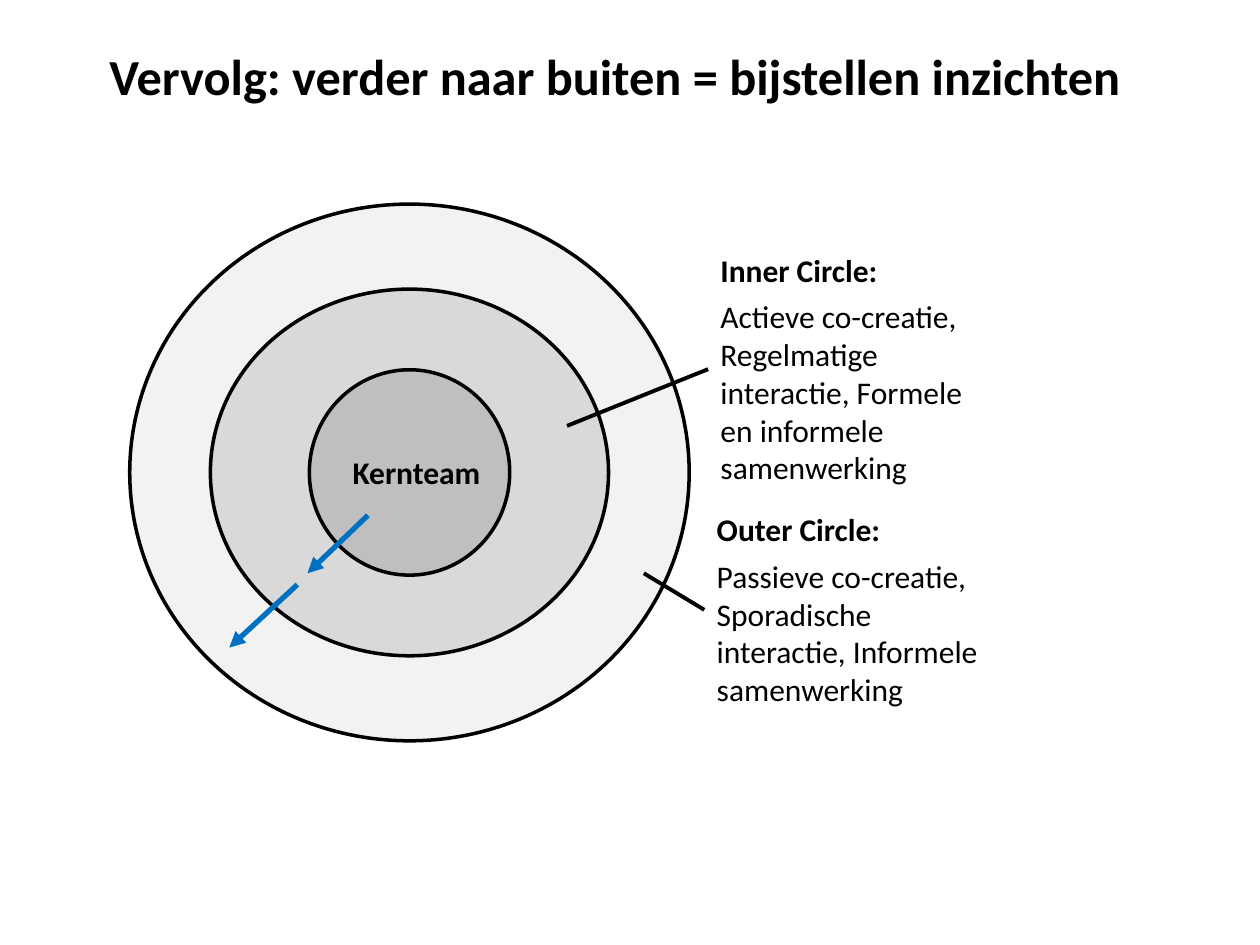
from lxml import etree
from pptx import Presentation
from pptx.dml.color import RGBColor
from pptx.enum.shapes import MSO_CONNECTOR, MSO_SHAPE
from pptx.enum.text import MSO_ANCHOR
from pptx.oxml.ns import qn
from pptx.util import Inches, Pt

OVAL = MSO_SHAPE.OVAL
STRAIGHT = MSO_CONNECTOR.STRAIGHT
MIDDLE = MSO_ANCHOR.MIDDLE

COLORS = {
    "black": "000000",
    "outer": "F2F2F2",
    "inner": "D9D9D9",
    "core": "BFBFBF",
    "arrow": "0070C0",
}


def add_text(slide, box, lines, size=18):
    """Add a text box from (text, bold) lines, one paragraph each."""
    shape = slide.shapes.add_textbox(*map(Inches, box))
    frame = shape.text_frame
    frame.word_wrap = True
    for index, (text, bold) in enumerate(lines):
        paragraph = frame.add_paragraph() if index else frame.paragraphs[0]
        if index:
            paragraph.space_before = Pt(5)
        run = paragraph.add_run()
        run.text = text
        run.font.name = "Calibri"
        run.font.size = Pt(size)
        run.font.bold = bold
        run.font.color.rgb = RGBColor.from_string(COLORS["black"])
    return frame


def add_line(slide, start, end, color, width):
    line = slide.shapes.add_connector(STRAIGHT, *map(Inches, start + end))
    line.line.color.rgb = RGBColor.from_string(COLORS[color])
    line.line.width = Pt(width)
    etree.SubElement(line._element.spPr, qn("a:effectLst"))
    return line


presentation = Presentation()
presentation.slide_width = Inches(10)
presentation.slide_height = Inches(7.5)
slide = presentation.slides.add_slide(presentation.slide_layouts[6])

title = "Vervolg: verder naar buiten = bijstellen inzichten"
title_frame = add_text(slide, (0.77, 0.26, 9.12, 0.67), [(title, True)], 28.8)
title_frame.vertical_anchor = MIDDLE

# Concentric rings, from the outside in
center_x, center_y = 3.25, 3.75
for color, width, height in [
    ("outer", 4.44, 4.26),
    ("inner", 3.16, 2.91),
    ("core", 1.59, 1.63),
]:
    ring = slide.shapes.add_shape(
        OVAL,
        Inches(center_x - width / 2),
        Inches(center_y - height / 2),
        Inches(width),
        Inches(height),
    )
    ring.shadow.inherit = False
    ring.fill.solid()
    ring.fill.fore_color.rgb = RGBColor.from_string(COLORS[color])
    ring.line.color.rgb = RGBColor.from_string(COLORS["black"])
    ring.line.width = Pt(2)

add_text(slide, (2.7, 3.55, 1.34, 0.4), [("Kernteam", True)])
add_text(slide, (5.62, 1.94, 2.24, 1.99), [
    ("Inner Circle:", True),
    ("Actieve co-creatie, Regelmatige interactie, "
     "Formele en informele samenwerking", False),
])
add_text(slide, (5.59, 4, 2.34, 1.69), [
    ("Outer Circle:", True),
    ("Passieve co-creatie, Sporadische interactie, "
     "Informele samenwerking", False),
])

# Leader lines from the descriptions to their rings
for start, end in [((5.62, 2.93), (4.5, 3.38)), ((5.59, 4.84), (5.11, 4.55))]:
    add_line(slide, start, end, "black", 2.25)

# Arrows moving outward across the ring borders
for start, end in [((2.92, 4.09), (2.44, 4.55)), ((2.36, 4.64), (1.82, 5.14))]:
    arrow = add_line(slide, start, end, "arrow", 3)
    etree.SubElement(arrow.line._get_or_add_ln(), qn("a:tailEnd"), type="triangle")

presentation.save("out.pptx")
